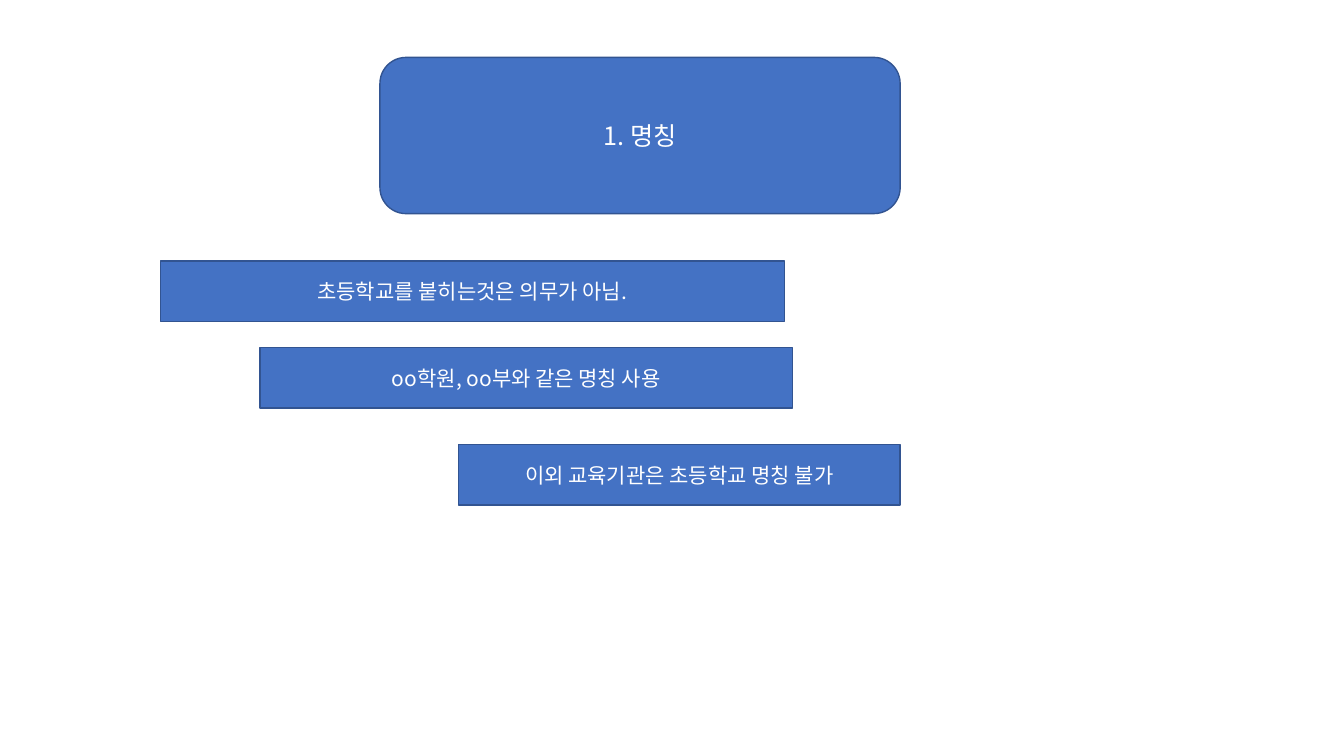
import dataclasses

import pptx
import pptx.dml.color
import pptx.enum.shapes
import pptx.enum.text
import pptx.oxml
import pptx.oxml.ns
import pptx.util

Pt = pptx.util.Pt
RGB = pptx.dml.color.RGBColor.from_string
SHAPES = pptx.enum.shapes.MSO_SHAPE


@dataclasses.dataclass(frozen=True)
class Theme:
    fill: str = "4472C4"
    line: str = "325491"
    text: str = "FFFFFF"
    font: str = "Noto Sans CJK KR"
    title_size: int = 18
    bar_size: int = 15
    line_width: int = 1


THEME = Theme()
TITLE_BOX = (271.4, 41, 371.6, 111.6)
BAR_HEIGHT = 43.2
BARS = [
    ("초등학교를 붙히는것은 의무가 아님.", 114.5, 186.5, 445.7),
    ("oo학원, oo부와 같은 명칭 사용", 185.8, 248.4, 380.2),
    ("이외 교육기관은 초등학교 명칭 불가", 327.6, 317.5, 315.4),
]


def set_attrs(obj, values):
    for name, value in values.items():
        setattr(obj, name, value)


def add_panel(slide, kind, box):
    sp = slide.shapes.add_shape(kind, *map(Pt, box))
    sp.shadow.inherit = False
    sp.fill.solid()
    sp.fill.fore_color.rgb = RGB(THEME.fill)
    sp.line.color.rgb = RGB(THEME.line)
    sp.line.width = Pt(THEME.line_width)
    return sp


def write_text(sp, text, size):
    tf = sp.text_frame
    set_attrs(tf, {
        "word_wrap": True,
        "auto_size": pptx.enum.text.MSO_AUTO_SIZE.NONE,
        "vertical_anchor": pptx.enum.text.MSO_ANCHOR.MIDDLE,
    })
    p = tf.paragraphs[0]
    p.alignment = pptx.enum.text.PP_ALIGN.CENTER
    r = p.add_run()
    r.text = text
    set_attrs(r.font, {"name": THEME.font, "size": Pt(size), "bold": False})
    r.font.color.rgb = RGB(THEME.text)
    ea = pptx.oxml.parse_xml(f'<a:ea {pptx.oxml.ns.nsdecls("a")} typeface="{THEME.font}"/>')
    r.font._element.find(pptx.oxml.ns.qn("a:latin")).addnext(ea)


def add_title(slide, box, text):
    add_panel(slide, SHAPES.ROUNDED_RECTANGLE, box)
    title = slide.shapes.title
    set_attrs(title, dict(zip(("left", "top", "width", "height"), map(Pt, box))))
    write_text(title, text, THEME.title_size)
    slide.shapes._spTree.append(title._element)


def add_bar(slide, box, text):
    write_text(add_panel(slide, SHAPES.RECTANGLE, box), text, THEME.bar_size)


def main():
    prs = pptx.Presentation()
    set_attrs(prs, {"slide_width": Pt(960), "slide_height": Pt(540)})
    slide = prs.slides.add_slide(prs.slide_layouts.get_by_name("Title Only"))
    add_title(slide, TITLE_BOX, "1. 명칭")
    for text, left, top, width in BARS:
        add_bar(slide, (left, top, width, BAR_HEIGHT), text)
    prs.save("out.pptx")


if __name__ == "__main__":
    main()
